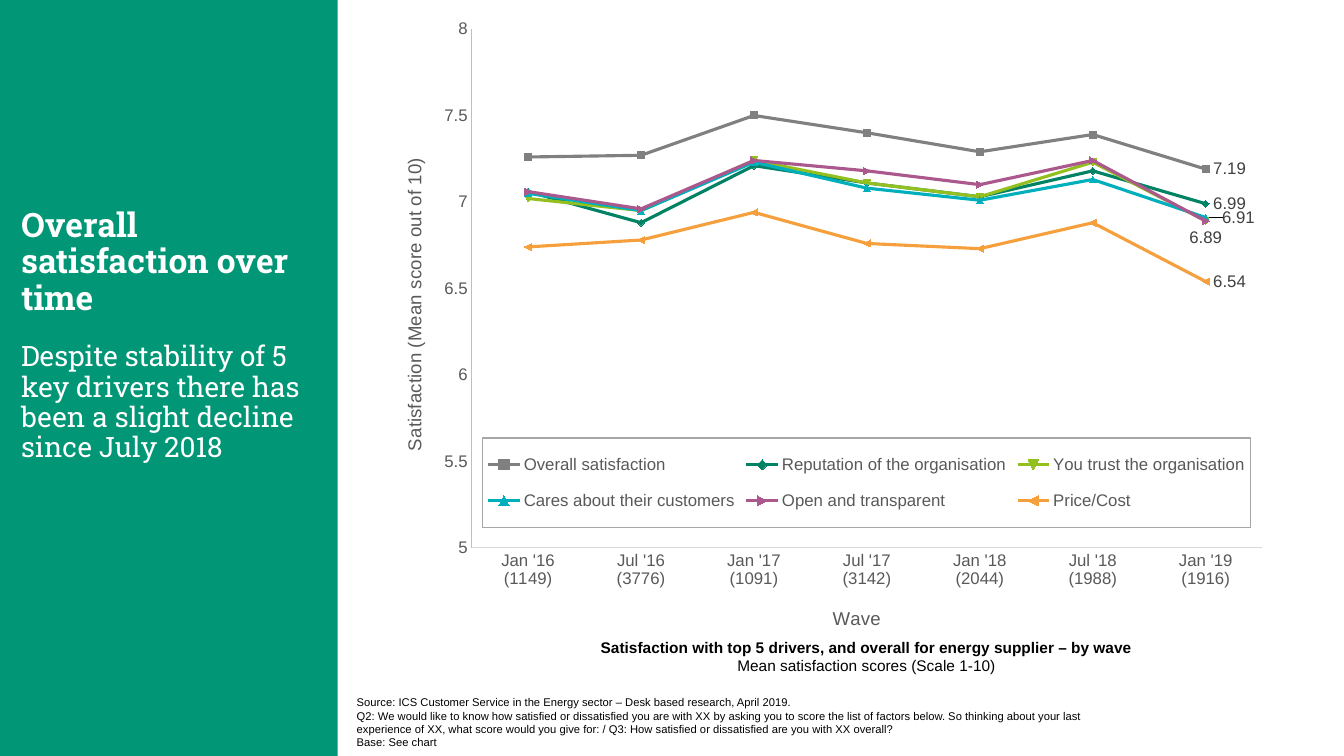
from dataclasses import dataclass
from typing import Optional

from lxml.etree import SubElement
from pptx import Presentation
from pptx.chart.data import CategoryChartData
from pptx.dml.color import RGBColor
from pptx.enum.chart import XL_CHART_TYPE, XL_LABEL_POSITION as Pos
from pptx.enum.chart import XL_LEGEND_POSITION, XL_TICK_MARK
from pptx.enum.shapes import MSO_SHAPE
from pptx.enum.text import PP_ALIGN
from pptx.oxml import parse_xml
from pptx.oxml.ns import nsdecls, qn
from pptx.util import Inches, Pt

WHITE = RGBColor(0xFF, 0xFF, 0xFF)
BLACK = RGBColor(0, 0, 0)
PANEL_GREEN = RGBColor(0x00, 0x96, 0x76)
AXIS_TEXT = RGBColor(0x59, 0x59, 0x59)
LABEL_TEXT = RGBColor(0x40, 0x40, 0x40)
CAT_LINE = RGBColor(0xD9, 0xD9, 0xD9)
VAL_LINE = RGBColor(0xBF, 0xBF, 0xBF)
GREY = RGBColor(0x80, 0x80, 0x80)
DARK_GREEN = RGBColor(0x00, 0x82, 0x65)
LIME = RGBColor(0x93, 0xC0, 0x1F)
TEAL = RGBColor(0x00, 0xAF, 0xBC)
PLUM = RGBColor(0xAB, 0x58, 0x8C)
ORANGE = RGBColor(0xF5, 0xA0, 0x3D)


@dataclass
class Para:
    text: str
    size: float
    bold: bool = False
    before: float = 0


@dataclass
class Driver:
    name: str
    color: RGBColor
    scores: tuple
    label: Optional[Pos] = Pos.RIGHT
    shift: float = 0


WAVES = ["Jan '16\n(1149)", "Jul '16\n(3776)", "Jan '17\n(1091)", "Jul '17\n(3142)",
         "Jan '18\n(2044)", "Jul '18\n(1988)", "Jan '19\n(1916)"]
DRIVERS = [
    Driver("Overall satisfaction", GREY, (7.26, 7.27, 7.5, 7.4, 7.29, 7.39, 7.19)),
    Driver("Reputation of the organisation", DARK_GREEN,
           (7.06, 6.88, 7.21, 7.11, 7.03, 7.18, 6.99)),
    Driver("You trust the organisation", LIME,
           (7.02, 6.95, 7.24, 7.11, 7.03, 7.23, 6.89), label=None),
    Driver("Cares about their customers", TEAL,
           (7.05, 6.95, 7.23, 7.08, 7.01, 7.13, 6.91), shift=0.01),
    Driver("Open and transparent", PLUM,
           (7.06, 6.96, 7.24, 7.18, 7.1, 7.24, 6.89), label=Pos.BELOW),
    Driver("Price/Cost", ORANGE, (6.74, 6.78, 6.94, 6.76, 6.73, 6.88, 6.54)),
]


def add_text(slide, box: tuple, paras: list, font: str, color: RGBColor,
             align=PP_ALIGN.LEFT, spacing: float = 1.0, inset: bool = True) -> None:
    tf = slide.shapes.add_textbox(*map(Inches, box)).text_frame
    tf.word_wrap = True
    if not inset:
        tf.margin_left = tf.margin_right = tf.margin_top = tf.margin_bottom = 0
    for i, para in enumerate(paras):
        p = tf.paragraphs[0] if i == 0 else tf.add_paragraph()
        p.alignment = align
        p.line_spacing = spacing
        if para.before:
            p.space_before = Pt(para.before)
        r = p.add_run()
        r.text = para.text
        style(r.font, para.size, color, font, para.bold)


def style(font, size: float, color: RGBColor, name: str = "Arial", bold: bool = False) -> None:
    font.size, font.name, font.bold = Pt(size), name, bold
    font.color.rgb = color


def set_layout(parent, index: int, **values) -> None:
    """Give a chart part a manual layout, as child number index."""
    for old in parent.findall(qn("c:layout")):
        parent.remove(old)
    layout = parse_xml(f"<c:layout {nsdecls('c')}><c:manualLayout/></c:layout>")
    for tag, value in values.items():
        SubElement(layout[0], qn(f"c:{tag}")).set("val", str(value))
    parent.insert(index, layout)


def style_axis(axis, title: str, line: RGBColor, x: float, y: float, rotation: int) -> None:
    axis.has_major_gridlines = False
    axis.major_tick_mark = axis.minor_tick_mark = XL_TICK_MARK.NONE
    axis.format.line.color.rgb = line
    axis.format.line.width = Pt(0.75)
    style(axis.tick_labels.font, 12, AXIS_TEXT)
    tf = axis.axis_title.text_frame
    r = tf.paragraphs[0].add_run()
    r.text = title
    style(r.font, 13.3, AXIS_TEXT)
    title_xml = axis.axis_title._element
    title_xml.find(".//" + qn("a:bodyPr")).set("rot", str(rotation))
    set_layout(title_xml, 1, xMode="edge", yMode="edge", x=x, y=y)


def add_scores_chart(slide) -> None:
    data = CategoryChartData(number_format="0.00")
    data.categories = WAVES
    for driver in DRIVERS:
        data.add_series(driver.name, driver.scores)
    box = map(Inches, (3.78, 0.05, 8.89, 6.45))
    chart = slide.shapes.add_chart(XL_CHART_TYPE.LINE, *box, data).chart
    chart.has_title = False
    style(chart.font, 10, BLACK)
    plot = chart.plots[0]
    plot.vary_by_categories = False

    # Axes and plot area
    style_axis(chart.category_axis, "Wave", CAT_LINE, 0.5, 0.92, 0)
    val = chart.value_axis
    style_axis(val, "Satisfaction (Mean score out of 10)", VAL_LINE, 0.02, 0.23, -5400000)
    val.minimum_scale, val.maximum_scale, val.major_unit = 5, 8, 0.5
    val.tick_labels.number_format = "General"
    val.tick_labels.number_format_is_linked = False
    plot_area = chart._chartSpace.chart.plotArea
    set_layout(plot_area, 0, layoutTarget="inner", xMode="edge", yMode="edge",
               x=0.101, y=0.037, w=0.882, h=0.798)

    # Lines, with the last wave labelled
    for driver, line in zip(DRIVERS, plot.series):
        line.smooth = False
        line.format.line.color.rgb = driver.color
        line.format.line.width = Pt(2.25)
        line.marker.style = None
        if driver.label is None:
            continue
        label = line.points[len(WAVES) - 1].data_label
        style(label.font, 12, LABEL_TEXT)
        label.position = driver.label
        line.data_labels.show_value = False
        if driver.shift:
            dlbl = line.data_labels._element.find(qn("c:dLbl"))
            set_layout(dlbl, 1, x=driver.shift, y=0)

    # Framed legend inside the plot
    chart.has_legend = True
    legend = chart.legend
    legend.position = XL_LEGEND_POSITION.TOP
    legend.include_in_layout = False
    style(legend.font, 12, AXIS_TEXT)
    set_layout(legend._element, 1, xMode="edge", yMode="edge",
               x=0.113, y=0.666, w=0.857, h=0.138)
    legend._element.find(qn("c:txPr")).addprevious(parse_xml(
        f'<c:spPr {nsdecls("c", "a")}><a:ln w="9525"><a:solidFill>'
        '<a:srgbClr val="A6A6A6"/></a:solidFill></a:ln></c:spPr>'))


def main() -> None:
    prs = Presentation()
    prs.slide_width, prs.slide_height = Inches(13.33), Inches(7.5)
    s = prs.slides.add_slide(prs.slide_layouts[6])

    # Side panel
    sp = s.shapes.add_shape(MSO_SHAPE.RECTANGLE, 0, 0, Inches(3.35), prs.slide_height)
    sp.shadow.inherit = False
    sp.fill.solid()
    sp.fill.fore_color.rgb = PANEL_GREEN
    sp.line.fill.background()
    add_text(s, (0.21, 2.07, 3.06, 5), [
        Para("Overall satisfaction over time", 24, bold=True),
        Para("Despite stability of 5 key drivers there has been a slight decline "
             "since July 2018", 20, before=18),
    ], "Roboto Slab", WHITE, spacing=0.9, inset=False)

    # Chart, caption and source
    add_scores_chart(s)
    add_text(s, (5.52, 6.28, 6.15, 0.44), [
        Para("Satisfaction with top 5 drivers, and overall for energy supplier – by wave",
             11, bold=True),
        Para("Mean satisfaction scores (Scale 1-10)", 11),
    ], "Arial", BLACK, PP_ALIGN.CENTER)
    add_text(s, (3.44, 6.85, 7.46, 0.65), [
        Para("Source: ICS Customer Service in the Energy sector – Desk based research, "
             "April 2019.", 8),
        Para("Q2: We would like to know how satisfied or dissatisfied you are with XX by "
             "asking you to score the list of factors below. So thinking about your last "
             "experience of XX, what score would you give for: / Q3: How satisfied or "
             "dissatisfied are you with XX overall?", 8),
        Para("Base: See chart", 8),
    ], "Arial", BLACK)
    prs.save("out.pptx")


if __name__ == "__main__":
    main()
